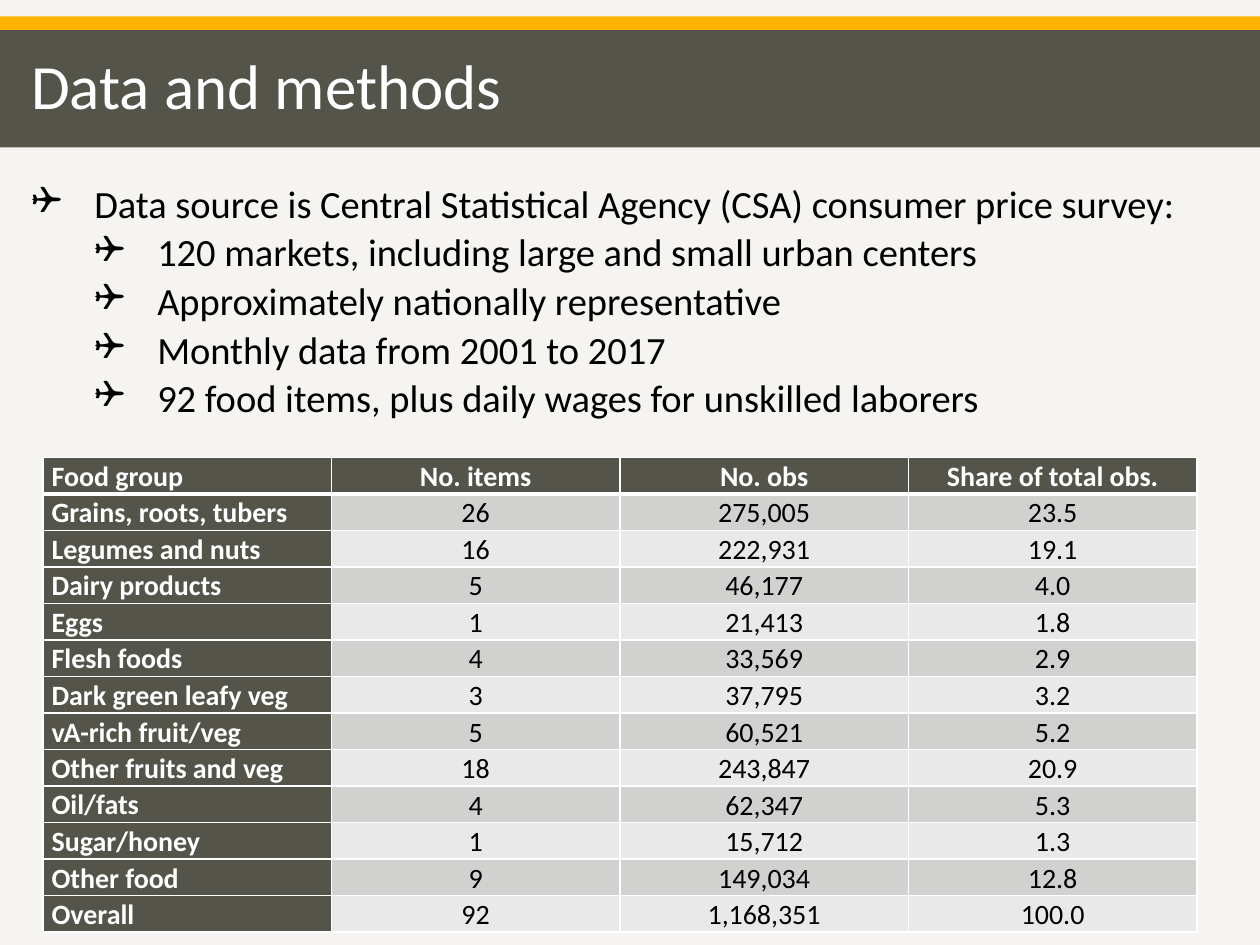
from lxml import etree
from pptx import Presentation
from pptx.dml.color import RGBColor
from pptx.enum.shapes import MSO_SHAPE
from pptx.enum.text import MSO_ANCHOR, PP_ALIGN
from pptx.oxml.ns import qn
from pptx.util import Inches, Pt

RECT = MSO_SHAPE.RECTANGLE
MIDDLE, BOTTOM = MSO_ANCHOR.MIDDLE, MSO_ANCHOR.BOTTOM
LEFT, CENTER = PP_ALIGN.LEFT, PP_ALIGN.CENTER

FONT = "Calibri"
PAPER, DARK, AMBER, WHITE, BLACK = "F5F4F0", "54544B", "FFB300", "FFFFFF", "000000"
BANDS = ("E9E9E9", "D1D1D0")

TITLE = "Data and methods"
BULLETS = [  # level, text
    (0, "Data source is Central Statistical Agency (CSA) consumer price survey:"),
    (1, "120 markets, including large and small urban centers"),
    (1, "Approximately nationally representative"),
    (1, "Monthly data from 2001 to 2017"),
    (1, "92 food items, plus daily wages for unskilled laborers"),
]
FOOD_GROUPS = [
    ("Food group", "No. items", "No. obs", "Share of total obs."),
    ("Grains, roots, tubers", "26", "275,005", "23.5"),
    ("Legumes and nuts", "16", "222,931", "19.1"),
    ("Dairy products", "5", "46,177", "4.0"),
    ("Eggs", "1", "21,413", "1.8"),
    ("Flesh foods", "4", "33,569", "2.9"),
    ("Dark green leafy veg", "3", "37,795", "3.2"),
    ("vA-rich fruit/veg", "5", "60,521", "5.2"),
    ("Other fruits and veg", "18", "243,847", "20.9"),
    ("Oil/fats", "4", "62,347", "5.3"),
    ("Sugar/honey", "1", "15,712", "1.3"),
    ("Other food", "9", "149,034", "12.8"),
    ("Overall", "92", "1,168,351", "100.0"),
]
MIDDLE_LABEL_ROWS = range(3, 9)
COL_W, ROW_H = 2.29, 0.29


def rgb(color):
    return RGBColor.from_string(color)


def write(p, text, size, color=BLACK, bold=False, align=LEFT, spacing=0.9, before=0):
    p.alignment = align
    p.line_spacing = spacing
    p.space_before = Pt(before)
    r = p.add_run()
    r.text = text
    r.font.name, r.font.size, r.font.bold = FONT, Pt(size), bold
    r.font.color.rgb = rgb(color)


def add_bar(s, top, height, color):
    sp = s.shapes.add_shape(RECT, 0, Inches(top), Inches(10), Inches(height))
    sp.shadow.inherit = False
    sp.fill.solid()
    sp.fill.fore_color.rgb = rgb(color)
    sp.line.fill.background()


def add_text_frame(s, left, top, width, height):
    tf = s.shapes.add_textbox(*map(Inches, (left, top, width, height))).text_frame
    tf.word_wrap = True
    return tf


def set_bullet(p, level):
    pPr = p._p.get_or_add_pPr()
    pPr.set("marL", str(Inches(0.5 * (level + 1))))
    pPr.set("indent", str(Inches(-0.5)))
    etree.SubElement(pPr, qn("a:buFont"), typeface="Wingdings")
    etree.SubElement(pPr, qn("a:buChar"), char="❑")
    p.level = level


def set_borders(cell, **widths):
    tcPr = cell._tc.get_or_add_tcPr()
    for side in "LRTB":
        ln = etree.SubElement(tcPr, qn("a:ln" + side), w=str(Pt(widths.get(side, 1))))
        fill = etree.SubElement(ln, qn("a:solidFill"))
        etree.SubElement(fill, qn("a:srgbClr"), val=WHITE)


def add_food_table(s):
    rows, cols = len(FOOD_GROUPS), len(FOOD_GROUPS[0])
    table = s.shapes.add_table(rows, cols, Inches(0.34), Inches(3.63),
                               Inches(COL_W * cols), Inches(ROW_H * rows)).table
    for column in table.columns:
        column.width = Inches(COL_W)
    for i, values in enumerate(FOOD_GROUPS):
        table.rows[i].height = Inches(ROW_H)
        for j, value in enumerate(values):
            cell = table.cell(i, j)
            label = i == 0 or j == 0
            set_borders(cell, T=3 if i == 1 else 1, B=3 if i == 0 else 1)
            cell.fill.solid()
            cell.fill.fore_color.rgb = rgb(DARK if label else BANDS[i % 2])
            cell.margin_left = cell.margin_right = Inches(0.07)
            cell.margin_top = cell.margin_bottom = 0
            low = label and i not in MIDDLE_LABEL_ROWS
            cell.vertical_anchor = BOTTOM if low else MIDDLE
            write(cell.text_frame.paragraphs[0], value, 16, WHITE if label else BLACK,
                  bold=label, align=CENTER if j else LEFT, spacing=1.07)


def main():
    prs = Presentation()
    prs.slide_width, prs.slide_height = Inches(10), Inches(7.5)
    s = prs.slides.add_slide(prs.slide_layouts[6])
    s.background.fill.solid()
    s.background.fill.fore_color.rgb = rgb(PAPER)

    add_bar(s, 0.13, 0.11, AMBER)
    add_bar(s, 0.24, 0.93, DARK)
    tf = add_text_frame(s, 0.15, 0.24, 8.83, 0.93)
    tf.vertical_anchor = MIDDLE
    write(tf.paragraphs[0], TITLE, 36, WHITE)

    add_food_table(s)

    tf = add_text_frame(s, 0.15, 1.42, 9.66, 2.11)
    for i, (level, text) in enumerate(BULLETS):
        p = tf.add_paragraph() if i else tf.paragraphs[0]
        set_bullet(p, level)
        write(p, text, 22, before=4 if i else 0)

    prs.save("out.pptx")


if __name__ == "__main__":
    main()
